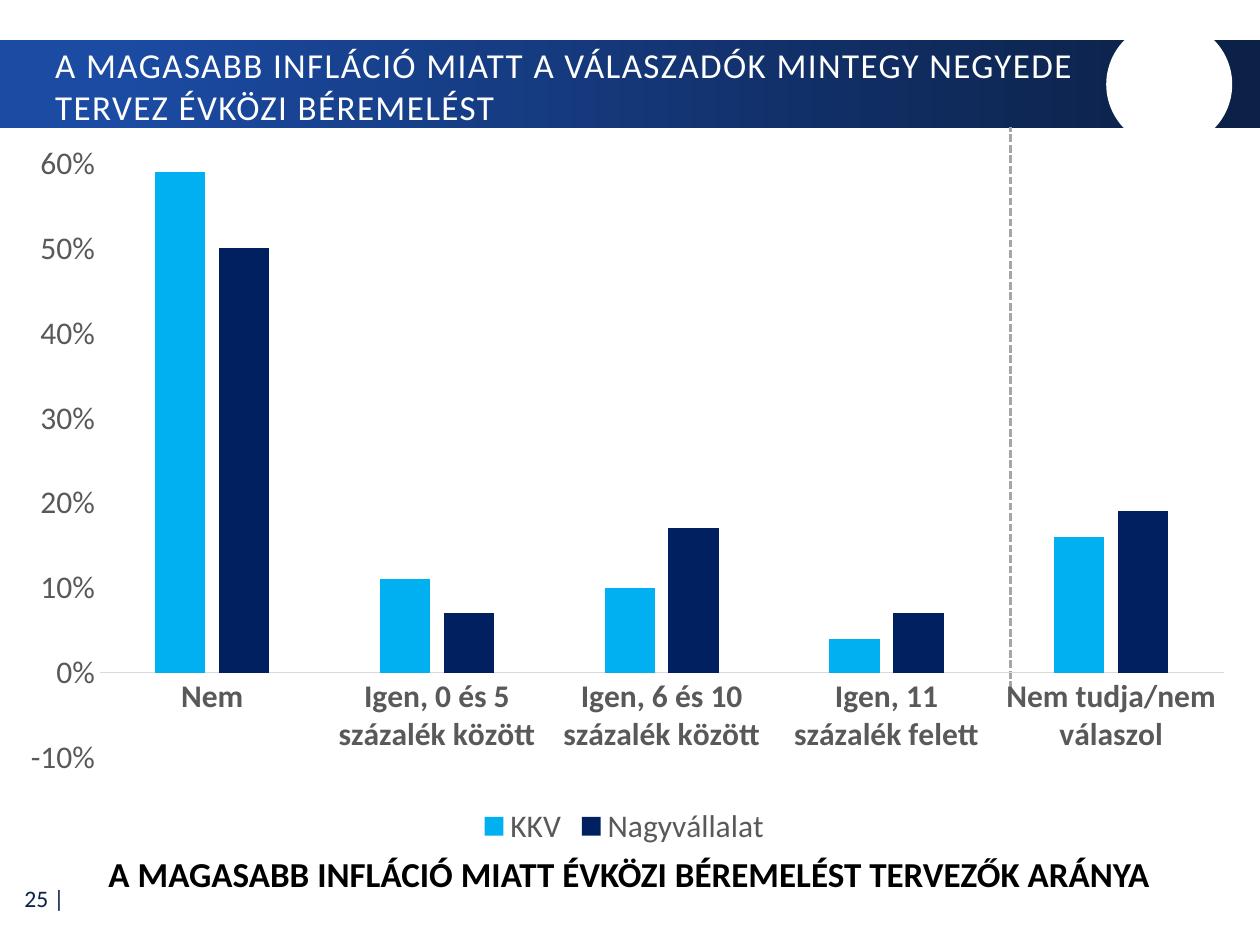
from dataclasses import dataclass

from lxml import etree
from pptx import Presentation
from pptx import util as u
from pptx.chart.data import CategoryChartData
from pptx.dml.color import RGBColor
from pptx.enum import chart as kinds, dml, shapes, text
from pptx.oxml import parse_xml
from pptx.oxml.ns import nsdecls, qn


@dataclass(frozen=True)
class Theme:
    font: str = "Calibri"
    white: str = "FFFFFF"
    black: str = "000000"
    blue: str = "1B4BA3"
    navy: str = "0C2148"
    grey: str = "595959"
    axis: str = "D9D9D9"
    divider: str = "A6A6A6"
    small: float = 13.5
    label: float = 18
    heading: float = 20


THEME = Theme()
CATEGORIES = ["Nem", "Igen, 0 és 5 százalék között", "Igen, 6 és 10 százalék között",
              "Igen, 11 százalék felett", "Nem tudja/nem válaszol"]
SERIES = [("KKV", "00B0F0", [0.59, 0.11, 0.10, 0.04, 0.16]),
          ("Nagyvállalat", "002060", [0.50, 0.07, 0.17, 0.07, 0.19])]


def rgb(value):
    return RGBColor.from_string(value)


def inches(*lengths):
    return [u.Inches(length) for length in lengths]


def style_font(font, size, color, bold=False):
    font.name = THEME.font
    font.size = u.Pt(size)
    font.bold = bold
    font.color.rgb = rgb(color)


def add_text(page, area, words, size, color, align, bold=False,
             anchor=text.MSO_ANCHOR.MIDDLE):
    box = page.shapes.add_textbox(*inches(*area))
    frame = box.text_frame
    frame.word_wrap = True
    frame.vertical_anchor = anchor
    frame.text = words
    para = frame.paragraphs[0]
    para.alignment = align
    span = para.runs[0]
    style_font(span.font, size, color, bold)
    return span


def add_plain_shape(page, kind, area):
    shape = page.shapes.add_shape(kind, *inches(*area))
    shape.shadow.inherit = False
    shape.line.fill.background()
    return shape


def add_header(page, left, top, width, height):
    band = add_plain_shape(page, shapes.MSO_SHAPE.RECTANGLE, (left, top, width, height))
    band.fill.gradient()
    band.fill.gradient_angle = 0
    stops = [(0.09, THEME.blue), (0.95, THEME.navy)]
    for stop, (position, color) in zip(band.fill.gradient_stops, stops):
        stop.position = position
        stop.color.rgb = rgb(color)

    disc = add_plain_shape(page, shapes.MSO_SHAPE.OVAL,
                           (left + width - 1.22, top + height / 2 - 0.5, 1, 1))
    disc.fill.solid()
    disc.fill.fore_color.rgb = rgb(THEME.white)

    title = add_text(page, (left + 0.34, top + 0.02, 8.57, height - 0.03),
                     "A MAGASABB INFLÁCIÓ MIATT A VÁLASZADÓK MINTEGY NEGYEDE "
                     "TERVEZ ÉVKÖZI BÉREMELÉST",
                     THEME.heading, THEME.white, text.PP_ALIGN.LEFT)
    title.font._element.set("spc", "80")


def set_plot_layout(chart, **fractions):
    plot_area = chart._chartSpace.chart.plotArea
    for old in plot_area.findall(qn("c:layout")):
        plot_area.remove(old)
    layout = parse_xml(f'<c:layout {nsdecls("c")}><c:manualLayout>'
                       '<c:layoutTarget val="inner"/><c:xMode val="edge"/>'
                       '<c:yMode val="edge"/></c:manualLayout></c:layout>')
    for name, value in fractions.items():
        etree.SubElement(layout[0], qn(f"c:{name}")).set("val", str(value))
    plot_area.insert(0, layout)


def add_raise_chart(page, left, top, width, height):
    data = CategoryChartData(number_format="0%")
    data.categories = CATEGORIES
    for name, _, values in SERIES:
        data.add_series(name, values)
    chart = page.shapes.add_chart(kinds.XL_CHART_TYPE.COLUMN_CLUSTERED,
                                  *inches(left, top, width, height), data).chart
    style_font(chart.font, THEME.label, THEME.black)
    chart.has_title = False
    chart.has_legend = True
    chart.legend.position = kinds.XL_LEGEND_POSITION.BOTTOM
    chart.legend.include_in_layout = False
    style_font(chart.legend.font, THEME.label, THEME.grey)

    plot = chart.plots[0]
    plot.gap_width = 219
    plot.overlap = -27
    plot.vary_by_categories = False
    for series, (_, color, _) in zip(plot.series, SERIES):
        series.format.fill.solid()
        series.format.fill.fore_color.rgb = rgb(color)

    for axis in (chart.category_axis, chart.value_axis):
        axis.has_major_gridlines = False
        axis.major_tick_mark = axis.minor_tick_mark = kinds.XL_TICK_MARK.NONE
    style_font(chart.category_axis.tick_labels.font, THEME.label, THEME.grey, bold=True)
    chart.category_axis.format.line.color.rgb = rgb(THEME.axis)
    chart.category_axis.format.line.width = u.Pt(0.75)

    scale = chart.value_axis
    scale.minimum_scale, scale.maximum_scale, scale.major_unit = -0.1, 0.6, 0.1
    scale.tick_labels.number_format = "0%"
    scale.tick_labels.number_format_is_linked = False
    style_font(scale.tick_labels.font, THEME.label, THEME.grey)
    scale.format.line.fill.background()
    set_plot_layout(chart, x=0.08, y=0.05, w=0.9, h=0.82)


def add_divider(page, x, top, bottom):
    line = page.shapes.add_connector(shapes.MSO_CONNECTOR.STRAIGHT,
                                     *inches(x, bottom, x, top))
    line.line.color.rgb = rgb(THEME.divider)
    line.line.width = u.Pt(1.5)
    line.line.dash_style = dml.MSO_LINE.SQUARE_DOT
    etree.SubElement(line._element.spPr, qn("a:effectLst"))


def add_footer(page, left, top, width, height):
    add_text(page, (left, top + 0.22, 0.6, 0.37), "25 |",
             THEME.small, THEME.navy, text.PP_ALIGN.RIGHT)
    add_text(page, (left + 0.74, top, width - 1.51, height),
             "A MAGASABB INFLÁCIÓ MIATT ÉVKÖZI BÉREMELÉST TERVEZŐK ARÁNYA",
             THEME.heading, THEME.black, text.PP_ALIGN.CENTER, bold=True,
             anchor=text.MSO_ANCHOR.TOP)


def main():
    deck = Presentation()
    deck.slide_width, deck.slide_height = inches(10, 7.5)
    page = deck.slides.add_slide(deck.slide_layouts[6])
    add_header(page, 0, 0.32, 10, 0.7)
    add_footer(page, 0.01, 6.72, 10, 0.44)
    add_divider(page, 8.02, 1.01, 5.47)
    add_raise_chart(page, 0, 1.01, 9.91, 5.75)
    deck.save("out.pptx")


if __name__ == "__main__":
    main()
